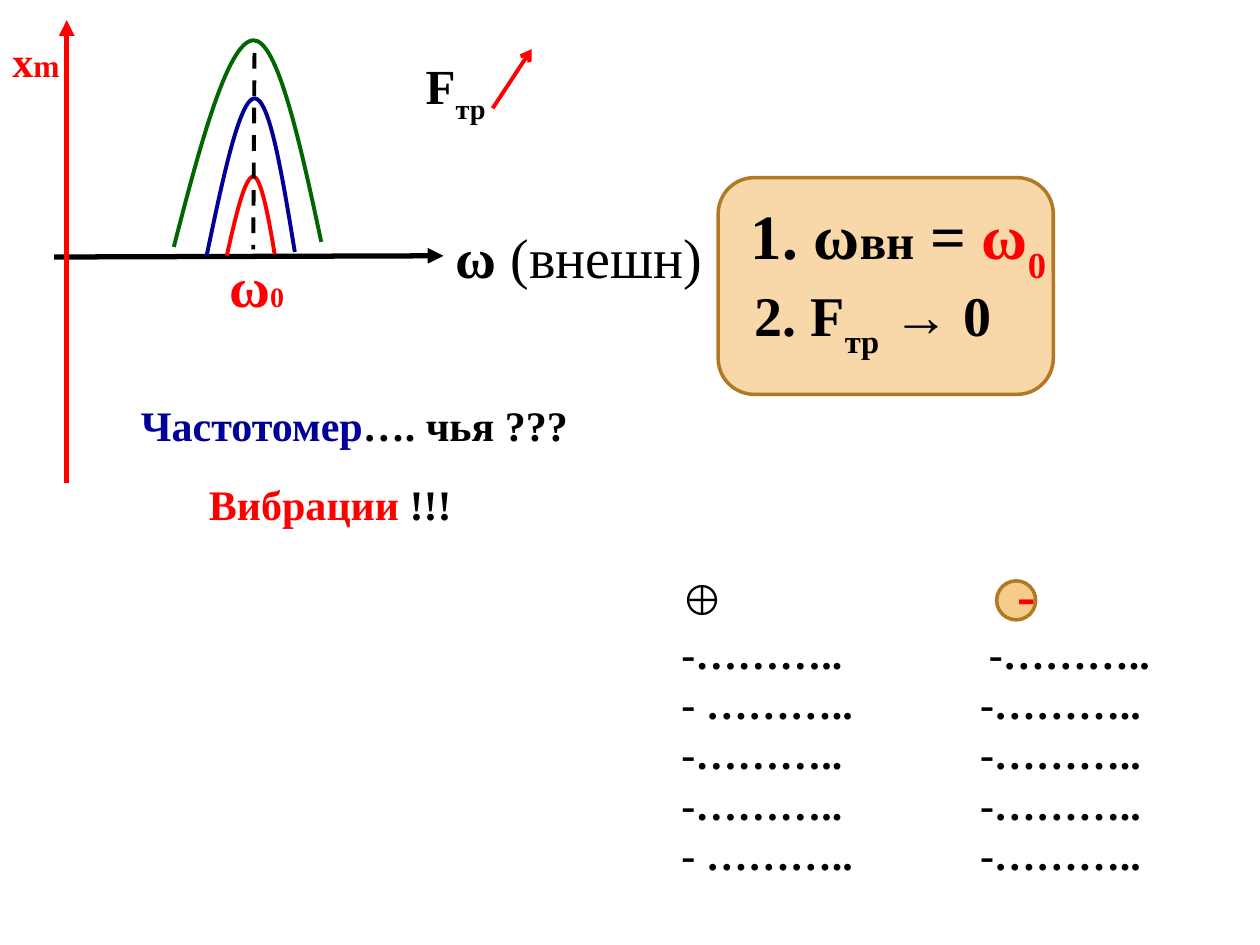
"""Build the resonance slide: curves, conditions, and a list of pros and cons."""
from lxml.etree import SubElement
from pptx import Presentation
from pptx.dml.color import RGBColor
from pptx.enum.dml import MSO_LINE
from pptx.enum.shapes import MSO_CONNECTOR, MSO_SHAPE
from pptx.enum.text import MSO_ANCHOR, MSO_AUTO_SIZE
from pptx.oxml.ns import qn
from pptx.util import Inches, Pt

THEME = {
    "font": "Times New Roman",
    "black": RGBColor.from_string("000000"),
    "red": RGBColor.from_string("FF0000"),
    "blue": RGBColor.from_string("000099"),
    "green": RGBColor.from_string("006600"),
    "fill": RGBColor.from_string("F0A22E"),
    "edge": RGBColor.from_string("B27822"),
    "index": 16, "small": 18, "body": 24, "label": 28, "large": 32, "huge": 36,
}


def add_text(box, paragraphs, anchor=MSO_ANCHOR.TOP, wrap=False):
    sp = s.shapes.add_textbox(*map(Inches, box))
    tf = sp.text_frame
    frame = {"word_wrap": wrap, "auto_size": MSO_AUTO_SIZE.SHAPE_TO_FIT_TEXT, "vertical_anchor": anchor}
    for name, value in frame.items():
        setattr(tf, name, value)
    for i, runs in enumerate(paragraphs):
        p = tf.add_paragraph() if i else tf.paragraphs[0]
        for text, size, color, *extra in runs:
            r = p.add_run()
            r.text = text
            style = {"name": THEME["font"], "size": Pt(THEME[size]), "bold": "plain" not in extra}
            for name, value in style.items():
                setattr(r.font, name, value)
            r.font.color.rgb = THEME[color]
            if "sub" in extra:
                r.font._element.set("baseline", "-30000")
    return tf


def add_line(start, end, color, width, head=None, dash=None):
    line = s.shapes.add_connector(MSO_CONNECTOR.STRAIGHT, *map(Inches, (*start, *end)))
    line.line.color.rgb = THEME[color]
    line.line.width = Pt(width)
    if dash:
        line.line.dash_style = dash
    if head:
        SubElement(line.line._get_or_add_ln(), qn("a:tailEnd"), type=head)
    SubElement(line._element.spPr, qn("a:effectLst"))


prs = Presentation()
prs.slide_width, prs.slide_height = Inches(10), Inches(7.5)
s = prs.slides.add_slide(prs.slide_layouts[6])

panels = [
    (MSO_SHAPE.ROUNDED_RECTANGLE, (5.7, 1.41, 2.66, 1.72), 41),
    (MSO_SHAPE.OVAL, (7.91, 4.61, 0.31, 0.31), 54),
]
for kind, box, opacity in panels:
    sp = s.shapes.add_shape(kind, *map(Inches, box))
    sp.shadow.inherit = False
    sp.fill.solid()
    sp.fill.fore_color.rgb = THEME["fill"]
    color = sp._element.spPr.find(qn("a:solidFill"))[0]
    SubElement(color, qn("a:alpha"), val=str(opacity * 1000))
    sp.line.color.rgb = THEME["edge"]
    sp.line.width = Pt(2)

first = add_text((5.86, 1.56, 2.55, 0.71), [[
    ("ω", "huge", "black"), ("вн", "label", "black"), (" = ", "huge", "black"),
    ("ω", "huge", "red"), ("0", "huge", "red", "sub"),
]], MSO_ANCHOR.MIDDLE)

add_line((0.43, 2.04), (3.52, 2.03), "black", 3, "triangle")
add_line((0.53, 3.83), (0.53, 0.16), "red", 3, "triangle")

add_text((3.52, 1.72, 2.27, 0.64), [[("ω", "large", "black"), (" (внешн)", "large", "black", "plain")]])
add_text((0, 0.23, 0.6, 0.5), [[("x", "body", "red"), ("m", "small", "red")]])

curves = [
    ("red", [(1.8, 2.03), (1.87, 1.72), (1.94, 1.41), (2.01, 1.4), (2.07, 1.4), (2.13, 1.71), (2.18, 2.02)]),
    ("blue", [(1.64, 2.03), (1.77, 1.41), (1.9, 0.79), (2.02, 0.78), (2.14, 0.78), (2.24, 1.39), (2.34, 2)]),
    ("green", [(1.38, 1.96), (1.59, 1.14), (1.81, 0.33), (2.01, 0.32), (2.2, 0.31), (2.38, 1.12), (2.55, 1.92)]),
]
for color, knots in curves:
    start, *rest = [tuple(map(Inches, knot)) for knot in knots]
    builder = s.shapes.build_freeform(*start)
    builder.add_line_segments(rest, close=False)
    sp = builder.convert_to_shape()
    outline = next(sp._element.iter(qn("a:path")))
    for i, segment in enumerate(outline.findall(qn("a:lnTo"))):
        if i % 3 == 0:
            bezier = SubElement(outline, qn("a:cubicBezTo"))
        bezier.append(segment[0])
        outline.remove(segment)
    sp.shadow.inherit = False
    sp.fill.background()
    sp.line.color.rgb = THEME[color]
    sp.line.width = Pt(2.25)

add_line((2.02, 0.42), (2.01, 1.98), "black", 2.25, dash=MSO_LINE.DASH)
add_text((1.72, 1.95, 0.75, 0.64), [[("ω", "large", "red"), ("0", "index", "red"), (" ", "large", "red")]])
add_text((3.28, 0.39, 0.72, 0.57), [[("F", "label", "black"), ("тр", "label", "black", "sub")]])
add_line((3.91, 0.86), (4.22, 0.39), "red", 2.25, "arrow")

add_text((1.02, 3.12, 3.62, 0.5), [[("Частотомер", "body", "blue"), ("…. чья ???", "body", "black")]],
         MSO_ANCHOR.MIDDLE)
second = add_text((5.89, 2.22, 2.13, 0.64), [[
    ("2. F", "large", "black"), ("тр", "large", "black", "sub"), (" → 0", "large", "black"),
]], MSO_ANCHOR.MIDDLE)
for tf in (first, second):
    pPr = tf.paragraphs[0]._p.get_or_add_pPr()
    pPr.set("marL", str(Inches(0.5)))
    pPr.set("indent", str(Inches(-0.5)))
SubElement(first.paragraphs[0]._p.pPr, qn("a:buAutoNum"), type="arabicPeriod")

dots = "-……….."
rows = [[("⊕\t", "body", "black"), ("-", "large", "red")]]
for left in (dots, "- ………..", dots, dots, "- ……….."):
    rows.append([(f"{left}\t{dots}", "body", "black")])
tf = add_text((5.31, 4.38, 4.4, 2.66), rows, MSO_ANCHOR.MIDDLE, wrap=True)
for p, stop in zip(tf.paragraphs, (2.67, 2.44, 2.37, 2.37, 2.37, 2.37)):
    tabs = SubElement(p._p.get_or_add_pPr(), qn("a:tabLst"))
    SubElement(tabs, qn("a:tab"), pos=str(Inches(stop)), algn="l")

add_text((1.56, 3.75, 2.15, 0.5), [[("Вибрации ", "body", "red"), ("!!!", "body", "black")]],
         MSO_ANCHOR.MIDDLE)

prs.save("out.pptx")
